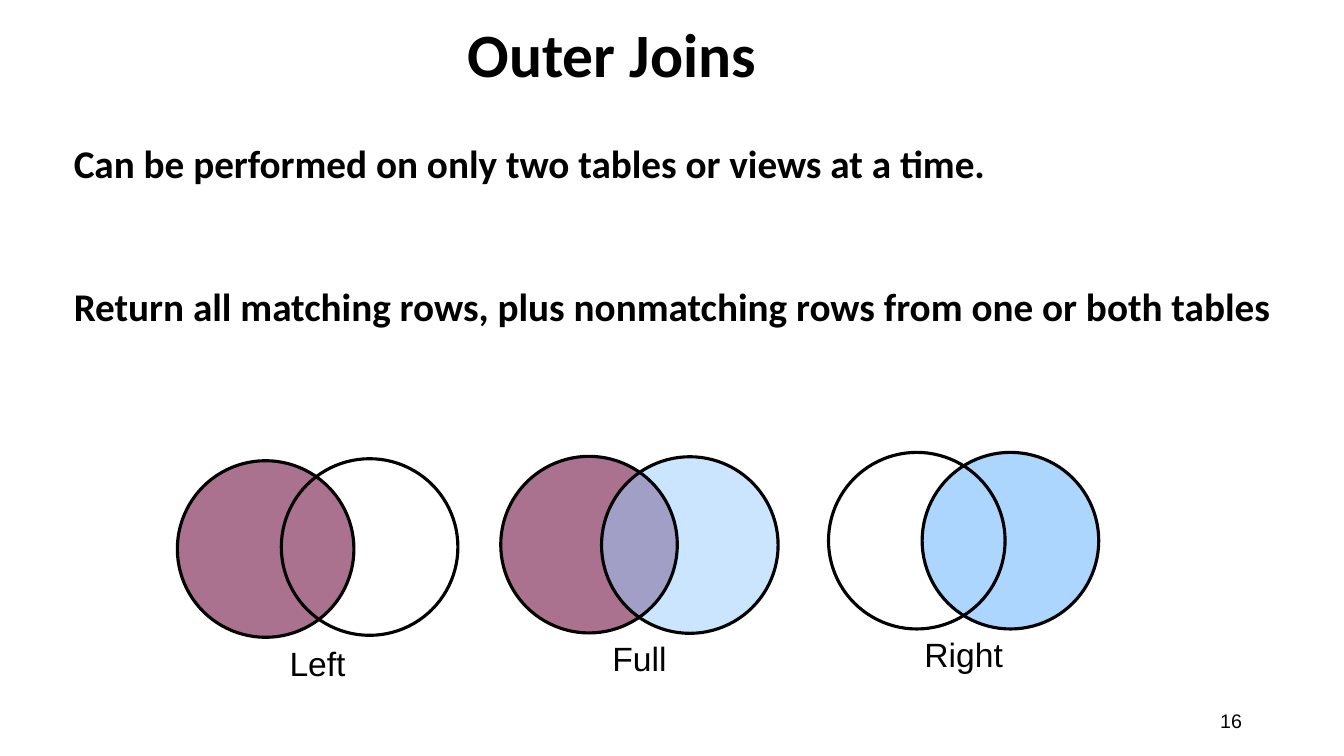
from lxml import etree
from pptx import Presentation
from pptx.dml.color import RGBColor
from pptx.enum.shapes import MSO_SHAPE
from pptx.enum.text import MSO_ANCHOR, PP_ALIGN
from pptx.oxml.ns import qn
from pptx.util import Cm, Pt

OVAL = MSO_SHAPE.OVAL
TOP, MIDDLE = MSO_ANCHOR.TOP, MSO_ANCHOR.MIDDLE
LEFT, CENTER, RIGHT = PP_ALIGN.LEFT, PP_ALIGN.CENTER, PP_ALIGN.RIGHT

BLACK = RGBColor(0x00, 0x00, 0x00)
PLUM = RGBColor(0x95, 0x4F, 0x72)
SKY = RGBColor(0x99, 0xCC, 0xFF)

SIZE = 4.45  # circle diameter in cm

POINTS = [
    # text, space before in points
    ("Can be performed on only two tables or views at a time.", 3.8),
    ("Return all matching rows, plus nonmatching rows from one or both tables", 72),
]

# label, left, tops of both circles, shift, fills as (colour, opacity %)
JOINS = [
    ("Left", 4.47, (11.61, 11.56), 2.62, ((PLUM, 80), None)),
    ("Full", 12.62, (11.5, 11.51), 2.54, ((PLUM, 80), (SKY, 50))),
    ("Right", 20.88, (11.4, 11.4), 2.36, (None, (SKY, 80))),
]


def place(shape, left, top, width, height):
    shape.left, shape.top = Cm(left), Cm(top)
    shape.width, shape.height = Cm(width), Cm(height)


def add_run(para, text, font, size, bold=False):
    run = para.add_run()
    run.text = text
    run.font.name = font
    run.font.size = Pt(size)
    run.font.bold = bold
    run.font.color.rgb = BLACK


def add_box(slide, box, anchor=TOP):
    frame = slide.shapes.add_textbox(*map(Cm, box)).text_frame
    frame.word_wrap = True
    frame.vertical_anchor = anchor
    return frame


def add_title(slide, text):
    title = slide.shapes.title
    place(title, 11.53, 0, 10.29, 2.9)
    frame = title.text_frame
    frame.vertical_anchor = MIDDLE
    para = frame.paragraphs[0]
    para.alignment = LEFT
    para.line_spacing = 0.9
    add_run(para, text, "Calibri", 44, True)


def add_points(slide, points):
    frame = add_box(slide, (1.3, 3.51, 32.1, 5.1))
    frame.margin_left = Cm(0.56)
    for i, (text, space) in enumerate(points):
        para = frame.add_paragraph() if i else frame.paragraphs[0]
        para.line_spacing = 0.9
        para.space_before = Pt(space)
        add_run(para, text, "Calibri", 28, True)


def add_disc(slide, left, top, fill=None):
    """Draw a filled disc, or a bare ring when no fill is given."""
    disc = slide.shapes.add_shape(OVAL, Cm(left), Cm(top), Cm(SIZE), Cm(SIZE))
    disc.shadow.inherit = False
    if fill:
        color, alpha = fill
        disc.fill.solid()
        disc.fill.fore_color.rgb = color
        tone = disc.fill._xPr.find(qn("a:solidFill"))[0]
        etree.SubElement(tone, qn("a:alpha")).set("val", str(alpha * 1000))
        disc.line.fill.background()
    else:
        disc.fill.background()
        disc.line.color.rgb = BLACK
        disc.line.width = Pt(2.25)


def add_join(slide, label, left, tops, shift, fills):
    spots = [(left, tops[0]), (left + shift, tops[1])]
    # Fills first, so that both rings stay crisp on top
    for spot, fill in zip(spots, fills):
        if fill:
            add_disc(slide, *spot, fill)
    for spot in spots:
        add_disc(slide, *spot)
    # Label centred below the pair
    frame = add_box(slide, (left, tops[0] + 4.58, SIZE + shift, 1.02))
    frame.margin_top = frame.margin_bottom = 0
    para = frame.paragraphs[0]
    para.alignment = CENTER
    add_run(para, label, "Arial", 24)


def add_number(slide, text):
    para = add_box(slide, (23.93, 17.65, 7.62, 1.02), MIDDLE).paragraphs[0]
    para.alignment = RIGHT
    add_run(para, text, "Arial", 14)


def main():
    deck = Presentation()
    deck.slide_width, deck.slide_height = Cm(33.87), Cm(19.05)
    slide = deck.slides.add_slide(deck.slide_layouts[5])

    # Heading and statements
    add_title(slide, "Outer Joins")
    add_points(slide, POINTS)

    # Venn diagrams
    for join in JOINS:
        add_join(slide, *join)

    # Slide number
    add_number(slide, "16")
    deck.save("out.pptx")


if __name__ == "__main__":
    main()
